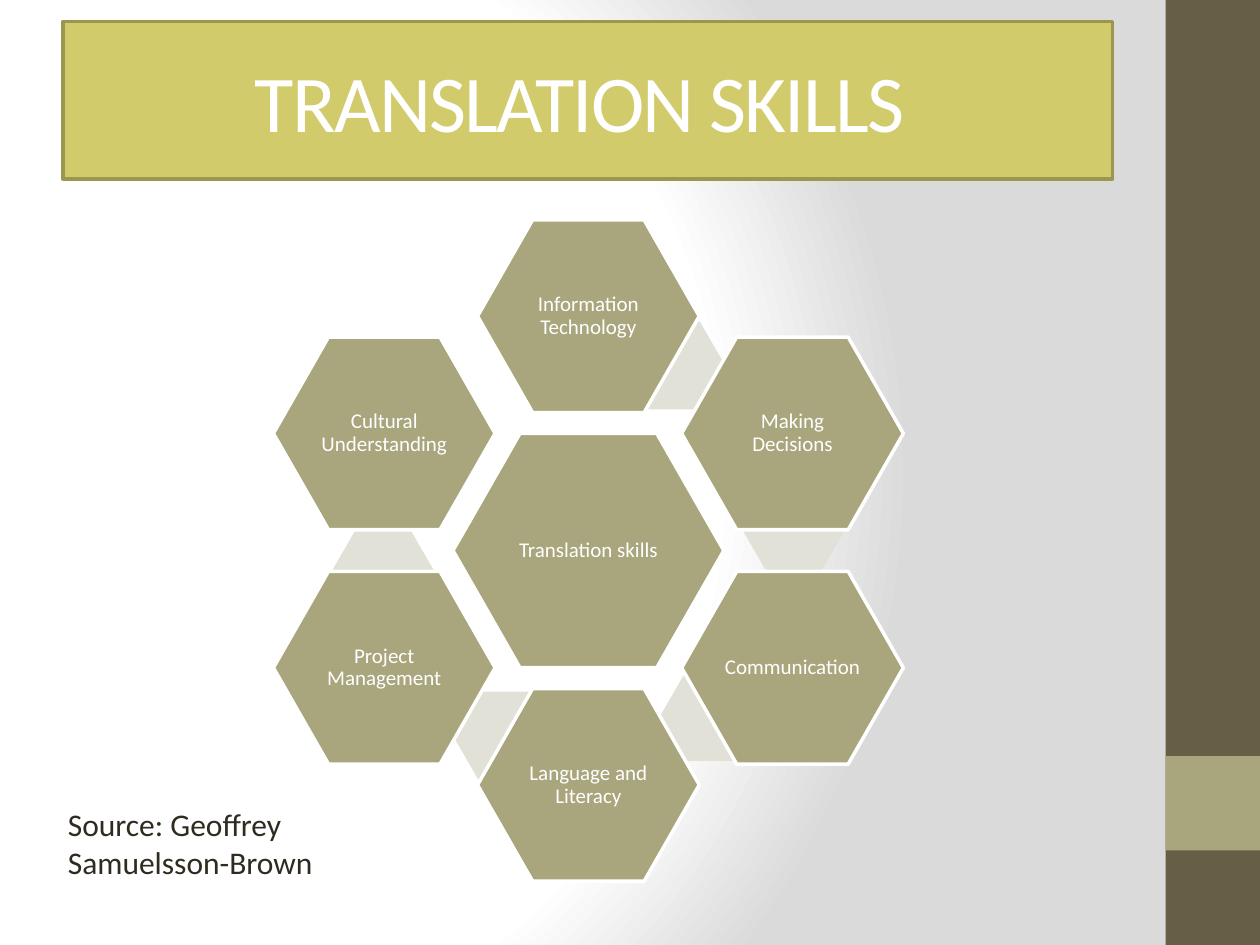
from lxml import etree
from pptx import Presentation
from pptx.dml.color import RGBColor
from pptx.enum.shapes import MSO_SHAPE
from pptx.enum.text import MSO_ANCHOR, PP_ALIGN
from pptx.oxml import parse_xml
from pptx.oxml.ns import nsdecls
from pptx.util import Inches, Pt

WHITE = RGBColor(0xFF, 0xFF, 0xFF)
BROWN = RGBColor(0x67, 0x5E, 0x47)
KHAKI = RGBColor(0xA9, 0xA5, 0x7C)
PALE_KHAKI = RGBColor(0xE2, 0xE1, 0xD7)
LIME = RGBColor(0xD2, 0xCB, 0x6C)
DARK_LIME = RGBColor(0x9B, 0x96, 0x50)
INK = RGBColor(0x2F, 0x2B, 0x20)
FONT = "Calibri"

TITLE = "TRANSLATION SKILLS "
CREDIT = "Source: Geoffrey Samuelsson-Brown"
HUB = "Translation skills"
# Clockwise from the top: skill, column and row step from the hub,
# and the centre of the pale link drawn beneath it
SKILLS = [
    ("Information Technology", 0, -2, (5.35, 2.9)),
    ("Making Decisions", 1, -1, (6.3, 4.21)),
    ("Communication", 1, 1, (5.64, 5.69)),
    ("Language and Literacy", 0, 2, (4, 5.84)),
    ("Project Management", -1, 1, (3.04, 4.53)),
    ("Cultural Understanding", -1, -1, None),
]
HUB_X, HUB_Y = 4.67, 4.37
COLUMN_STEP, ROW_STEP = 1.62, 0.93
HUB_SIZE, SKILL_SIZE, LINK_SIZE = (2.15, 1.86), (1.76, 1.53), (0.81, 0.7)
LABEL_SHARE = 0.67

BACKGROUND = f"""<p:bg {nsdecls('p', 'a')}><p:bgPr><a:gradFill rotWithShape="1"><a:gsLst>
<a:gs pos="0"><a:srgbClr val="FFFFFF"/></a:gs>
<a:gs pos="75000"><a:srgbClr val="FFFFFF"/></a:gs>
<a:gs pos="100000"><a:srgbClr val="DADADA"/></a:gs></a:gsLst>
<a:path path="circle"><a:fillToRect l="20000" t="50000" r="100000" b="50000"/></a:path>
</a:gradFill><a:effectLst/></p:bgPr></p:bg>"""


def add_filled(shapes, preset, box, fill, outline=None):
    shape = shapes.add_shape(preset, *map(Inches, box))
    shape.shadow.inherit = False
    shape.fill.solid()
    shape.fill.fore_color.rgb = fill
    if outline is None:
        shape.line.fill.background()
    else:
        shape.line.color.rgb = outline
        shape.line.width = Pt(2)
    return shape


def write(shape, words, size, color, align, anchor):
    frame = shape.text_frame
    frame.word_wrap = True
    frame.vertical_anchor = anchor
    paragraph = frame.paragraphs[0]
    paragraph.alignment = align
    run = paragraph.add_run()
    run.text = words
    run.font.size = Pt(size)
    run.font.name = FONT
    run.font.color.rgb = color
    return paragraph, run


def centred(x, y, size):
    width, height = size
    return x - width / 2, y - height / 2, width, height


def add_hexagon(shapes, x, y, size, fill, adjust, outline=None):
    hexagon = add_filled(shapes, MSO_SHAPE.HEXAGON, centred(x, y, size), fill, outline)
    hexagon.adjustments[0] = adjust


def add_skill(shapes, words, x, y, size):
    """Add a hexagon and the label centred on it."""
    add_hexagon(shapes, x, y, size, KHAKI, 0.286, WHITE)
    label_size = [side * LABEL_SHARE for side in size]
    label = shapes.add_textbox(*map(Inches, centred(x, y, label_size)))
    frame = label.text_frame
    frame.margin_left = frame.margin_right = Inches(0.02)
    frame.margin_top = frame.margin_bottom = Inches(0.02)
    paragraph, _ = write(label, words, 12, WHITE, PP_ALIGN.CENTER, MSO_ANCHOR.MIDDLE)
    paragraph.line_spacing = 0.9


def main():
    deck = Presentation()
    deck.slide_width, deck.slide_height = Inches(10), Inches(7.5)
    slide = deck.slides.add_slide(deck.slide_layouts[6])
    slide.element.cSld.insert(0, parse_xml(BACKGROUND))

    add_filled(slide.shapes, MSO_SHAPE.RECTANGLE, (9.25, 0, 0.75, 7.5), BROWN)
    add_filled(slide.shapes, MSO_SHAPE.RECTANGLE, (9.25, 6, 0.75, 0.75), KHAKI)

    banner = add_filled(slide.shapes, MSO_SHAPE.RECTANGLE, (0.5, 0.17, 8.33, 1.25),
                        LIME, DARK_LIME)
    _, heading = write(banner, TITLE, 46, WHITE, PP_ALIGN.CENTER, MSO_ANCHOR.MIDDLE)
    heading.font._element.set("spc", "-100")

    diagram = slide.shapes.add_group_shape().shapes
    add_skill(diagram, HUB, HUB_X, HUB_Y, HUB_SIZE)
    for words, column, row, link in SKILLS:
        if link:
            add_hexagon(diagram, *link, LINK_SIZE, PALE_KHAKI, 0.289)
        add_skill(diagram, words, HUB_X + column * COLUMN_STEP,
                  HUB_Y + row * ROW_STEP, SKILL_SIZE)

    credit = slide.shapes.add_textbox(*map(Inches, (0.44, 6.34, 3.02, 0.71)))
    write(credit, CREDIT, 18, INK, PP_ALIGN.LEFT, MSO_ANCHOR.TOP)

    deck.save("out.pptx")


if __name__ == "__main__":
    main()
